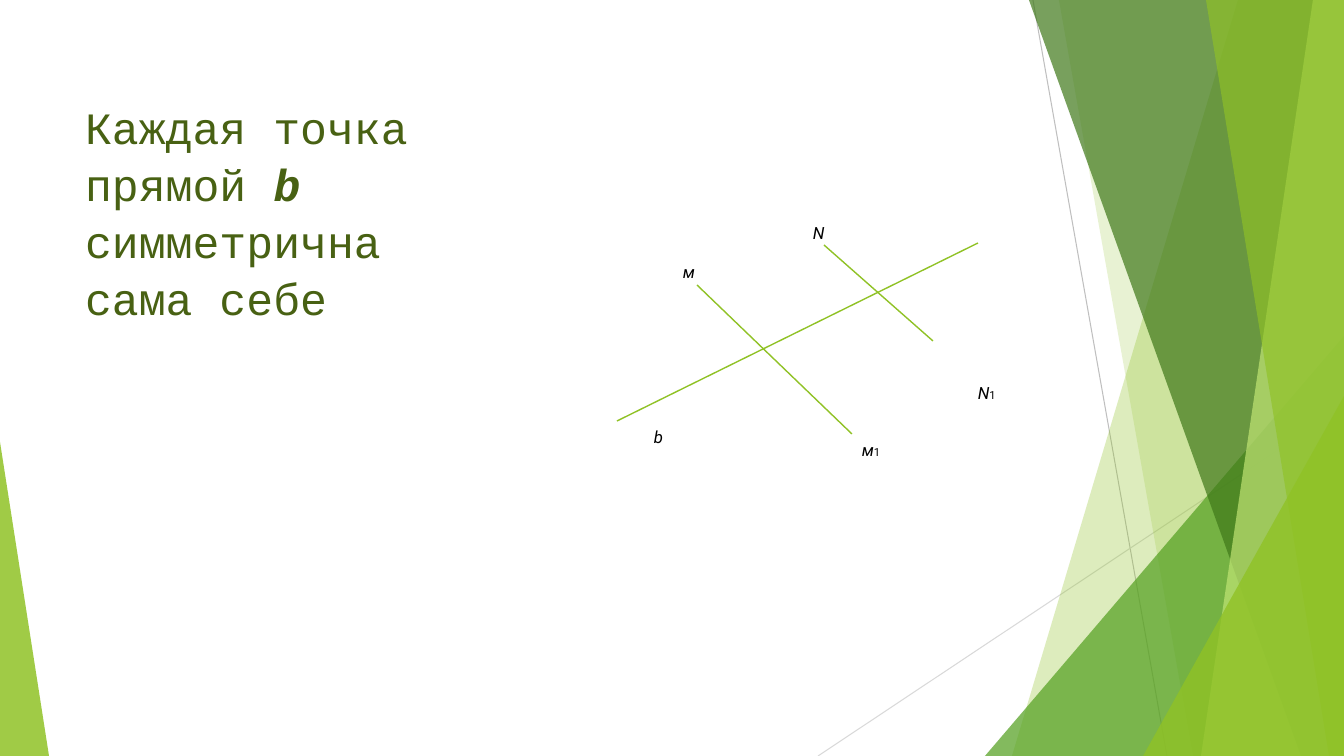
"""Build the slide on symmetry about line b."""
from dataclasses import dataclass
from typing import Any

from lxml.etree import SubElement
from pptx import Presentation
from pptx.dml.color import RGBColor
from pptx.enum.shapes import MSO_CONNECTOR, MSO_SHAPE
from pptx.enum.text import MSO_ANCHOR, MSO_AUTO_SIZE
from pptx.oxml.ns import qn
from pptx.util import Pt

WIDE, HIGH = 1344, 756
SCALE = 12192000 / WIDE


@dataclass(frozen=True)
class Theme:
    """Colours, fonts and type sizes."""
    lime: str = "90C226"
    green: str = "54A021"
    forest: str = "3F7819"
    pale: str = "C0E474"
    olive: str = "486113"
    black: str = "000000"
    gray: str = "BFBFBF"
    light: str = "D9D9D9"
    mono: str = "Courier New"
    sans: str = "Roboto"
    body: int = 32
    label: int = 12
    index: int = 8


@dataclass(frozen=True)
class Line:
    """A straight line between two points."""
    start: tuple[int, int]
    end: tuple[int, int]
    color: str
    weight: float = 1


@dataclass(frozen=True)
class Band:
    """A band from the slanted left edge to the right side."""
    top: int
    foot: int
    color: str
    alpha: int


@dataclass(frozen=True)
class Wedge:
    """A right triangle standing on the lower edge."""
    left: int
    top: int
    width: int
    apex: int
    color: str
    alpha: int


@dataclass(frozen=True)
class Label:
    """A point or line name with an optional index."""
    left: int
    top: int
    name: str
    index: str = ""


THEME = Theme()
RAYS = [
    Line((1033, 0), (1167, HIGH), THEME.gray, 0.75),
    Line((WIDE, 406), (818, HIGH), THEME.light, 0.75),
]
FACETS = [
    Band(1238, 1012, THEME.lime, 30),
    Band(1059, 1193, THEME.lime, 20),
    Wedge(985, 336, 359, 1, THEME.green, 72),
    Band(1029, 1301, THEME.forest, 70),
    Band(1313, 1201, THEME.pale, 70),
    Band(1206, 1329, THEME.lime, 65),
    Wedge(1143, 396, 201, 1, THEME.lime, 80),
    Wedge(0, 442, 49, 0, THEME.lime, 85),
]
LINES = [
    Line((978, 243), (617, 421), THEME.lime),
    Line((697, 285), (852, 434), THEME.lime),
    Line((824, 245), (933, 341), THEME.lime),
]
LABELS = [
    Label(644, 422, "b"),
    Label(852, 435, "м", "1"),
    Label(673, 257, "м"),
    Label(803, 218, "N"),
    Label(968, 378, "N", "1"),
]


def px(size: int) -> int:
    """Turn pixels into EMU."""
    return round(size * SCALE)


def apply(target: Any, values: dict[str, Any]) -> None:
    """Set each value on the target."""
    for key, value in values.items():
        setattr(target, key, value)


def write(par: Any, text: str, color: str, values: dict[str, Any]) -> None:
    """Add a run with its font."""
    run = par.add_run()
    run.text = text
    apply(run.font, values)
    run.font.color.rgb = RGBColor.from_string(color)


def draw_line(shapes: Any, line: Line) -> None:
    """Draw a line without a shadow."""
    ends = [px(n) for n in line.start + line.end]
    item = shapes.add_connector(MSO_CONNECTOR.STRAIGHT, *ends)
    item.line.width = Pt(line.weight)
    item.line.color.rgb = RGBColor.from_string(line.color)
    SubElement(item.element.spPr, qn("a:effectLst"))


def draw_facet(shapes: Any, facet: Band | Wedge) -> None:
    """Draw a see-through band or wedge."""
    if isinstance(facet, Band):
        pen = shapes.build_freeform(facet.top, 0, scale=SCALE)
        pen.add_line_segments([(WIDE, 0), (WIDE, HIGH), (facet.foot, HIGH)])
        item = pen.convert_to_shape()
    else:
        box = (facet.left, facet.top, facet.width, HIGH - facet.top)
        item = shapes.add_shape(MSO_SHAPE.ISOSCELES_TRIANGLE, *map(px, box))
        item.adjustments[0] = facet.apex
    item.shadow.inherit = False
    item.line.fill.background()
    item.fill.solid()
    item.fill.fore_color.rgb = RGBColor.from_string(facet.color)
    tint = item.element.spPr.find(".//" + qn("a:srgbClr"))
    SubElement(tint, qn("a:alpha"), val=str(facet.alpha * 1000))


def draw_label(shapes: Any, label: Label) -> None:
    """Write a name and its index."""
    box = shapes.add_textbox(*map(px, (label.left, label.top, 53, 30)))
    apply(box.text_frame, {"word_wrap": True,
                           "auto_size": MSO_AUTO_SIZE.SHAPE_TO_FIT_TEXT})
    par = box.text_frame.paragraphs[0]
    for text, size, slant in ((label.name, THEME.label, True),
                              (label.index, THEME.index, False)):
        if text:
            write(par, text, THEME.black,
                  {"name": THEME.sans, "size": Pt(size), "italic": slant})


def fill_body(body: Any) -> None:
    """Place and fill the main text."""
    apply(body, {"left": px(75), "top": px(91),
                 "width": px(425), "height": px(501)})
    apply(body.text_frame, {"word_wrap": True, "auto_size": MSO_AUTO_SIZE.NONE,
                            "vertical_anchor": MSO_ANCHOR.TOP})
    par = body.text_frame.paragraphs[0]
    apply(par, {"space_before": Pt(10), "line_spacing": 1.06})
    props = par._p.get_or_add_pPr()
    props.set("marL", "0")
    props.set("indent", "0")
    SubElement(props, qn("a:buNone"))
    for text, strong in (("Каждая точка прямой ", False), ("b ", True),
                         ("симметрична сама себе", False)):
        write(par, text, THEME.olive,
              {"name": THEME.mono, "size": Pt(THEME.body),
               "bold": strong, "italic": strong})


def main() -> None:
    """Build and save the slide."""
    deck = Presentation()
    apply(deck, {"slide_width": px(WIDE), "slide_height": px(HIGH)})
    slide = deck.slides.add_slide(deck.slide_layouts[1])
    shapes = slide.shapes
    title, body = slide.placeholders
    tree = body.element.getparent()
    tree.remove(title.element)
    for ray in RAYS:
        draw_line(shapes, ray)
    for facet in FACETS:
        draw_facet(shapes, facet)
    fill_body(body)
    tree.append(body.element)
    for line in LINES:
        draw_line(shapes, line)
    for label in LABELS:
        draw_label(shapes, label)
    deck.save("out.pptx")


if __name__ == "__main__":
    main()
